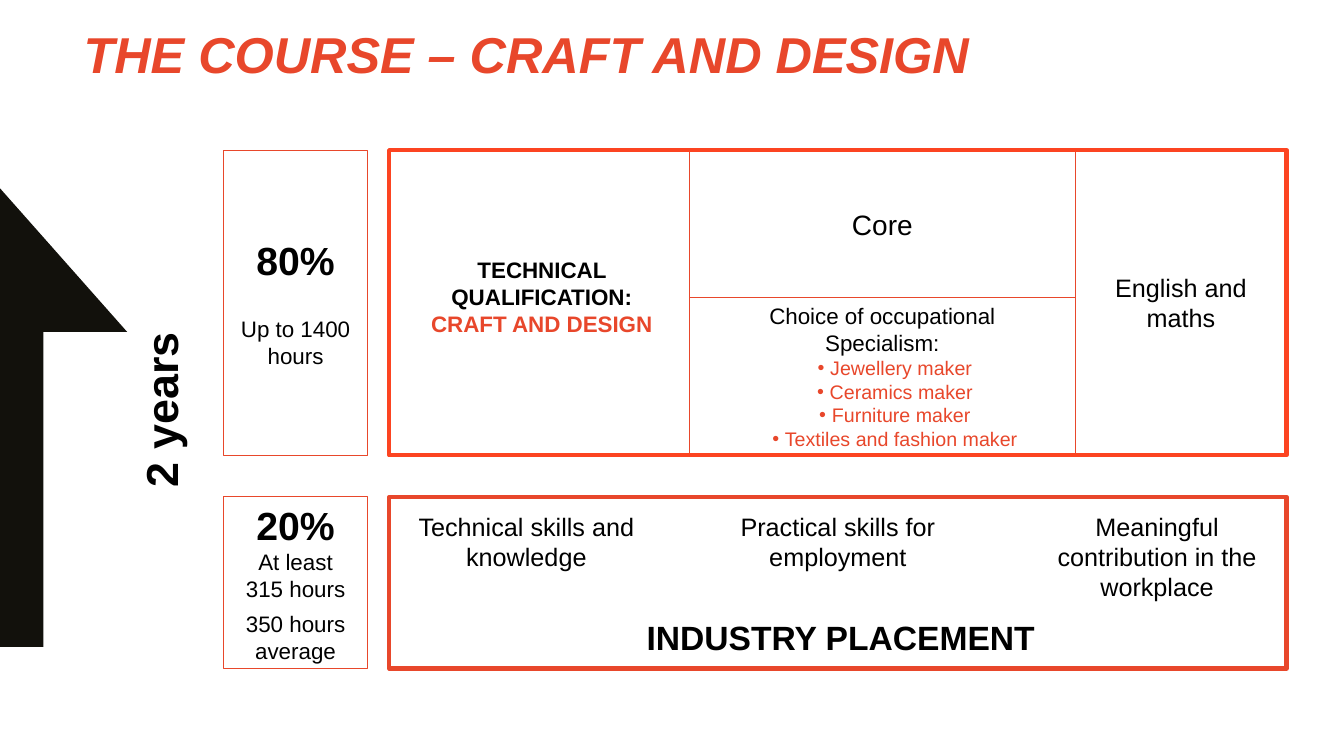
from lxml.etree import SubElement
from pptx import Presentation
from pptx.dml.color import RGBColor
from pptx.enum.shapes import MSO_SHAPE as Kind
from pptx.enum.text import MSO_ANCHOR as Anchor, MSO_AUTO_SIZE as Fit, PP_ALIGN as Align
from pptx.oxml.ns import qn
from pptx.util import Pt

HUES = {"ink": "000000", "red": "E8472B", "frame": "FC4421",
        "arrow": "12110C", "white": "FFFFFF"}
SKILLS = ["Jewellery maker", "Ceramics maker", "Furniture maker",
          "Textiles and fashion maker"]

# Column edges and row bands of the diagram
LEFT, TECH, CORE, MATHS, RIGHT = 160, 278, 492.5, 768, 919
TOP, SPLIT, END = 107.25, 212.5, 325.25
BASE, DEEP = 355, 122.5
TALL, WIDE, SIDE = END - TOP, RIGHT - TECH, 102.25


def hue(name):
    return RGBColor.from_string(HUES[name])


def place(shape, box):
    shape.left, shape.top, shape.width, shape.height = map(Pt, box)


def write(shape, rows, anchor=Anchor.MIDDLE, align=Align.CENTER):
    """Fill a shape with rows of (text, size, bold, colour)."""
    frame = shape.text_frame
    frame.word_wrap = True
    frame.auto_size = Fit.NONE
    frame.vertical_anchor = anchor
    frame.text = "\n".join(row[0] for row in rows)
    for para, (_, size, bold, tint) in zip(frame.paragraphs, rows):
        para.alignment = align
        para.space_before = Pt(0)
        for run in para.runs:
            font = run.font
            font.name, font.size, font.bold = "Arial", Pt(size), bold
            font.color.rgb = hue(tint)
    return frame.paragraphs


def outline(shape, tint, width):
    shape.line.color.rgb = hue(tint)
    shape.line.width = Pt(width)


def panel(slide, box, rows=(), tint="red", width=0.75):
    shape = slide.shapes.add_shape(Kind.RECTANGLE, *map(Pt, box))
    shape.shadow.inherit = False
    shape.fill.background()
    outline(shape, tint, width)
    return write(shape, rows) if rows else shape


def label(slide, box, rows, anchor=Anchor.TOP):
    shape = slide.shapes.add_textbox(*map(Pt, box))
    write(shape, rows, anchor)
    return shape


def bullet(para, on):
    props = para._p.get_or_add_pPr()
    props.set("marL", str(Pt(27 if on else 0)))
    props.set("indent", str(Pt(-9 if on else 0)))
    if on:
        SubElement(props, qn("a:buChar"), char="•")
    else:
        SubElement(props, qn("a:buNone"))


def arrow(slide):
    draft = slide.shapes.build_freeform(Pt(0), Pt(134.5))
    points = [(90.75, 237), (31, 237), (31, 462), (0, 462)]
    draft.add_line_segments([(Pt(x), Pt(y)) for x, y in points])
    shape = draft.convert_to_shape()
    shape.shadow.inherit = False
    shape.fill.solid()
    shape.fill.fore_color.rgb = hue("arrow")
    shape.line.fill.background()


def heading(slide):
    title = slide.shapes.title
    place(title, (52.5, 12.25, 710.5, 52))
    para = write(title, [("THE COURSE – CRAFT AND DESIGN", 36, True, "red")],
                 align=Align.LEFT)[0]
    para.runs[0].font.italic = True


def choices(slide):
    body = slide.placeholders[1]
    place(body, (CORE, SPLIT, MATHS - CORE, END - SPLIT))
    outline(body, "red", 0.75)
    intro = ["Choice of occupational", "Specialism:"]
    rows = [(text, 16, False, "ink") for text in intro]
    rows += [(text, 14, False, "red") for text in SKILLS]
    for spot, para in enumerate(write(body, rows)):
        bullet(para, spot >= len(intro))


def shares(slide):
    """Draw the two boxes with the share of time."""
    paras = panel(slide, (LEFT, TOP, SIDE, TALL), [
        ("80%", 28, True, "ink"), ("Up to 1400 hours", 16, False, "ink")])
    paras[1].space_before = Pt(23)
    paras = panel(slide, (LEFT, BASE, SIDE, DEEP), [
        ("20%", 28, True, "ink"), ("At least", 16, False, "ink"),
        ("315 hours", 16, False, "ink"), ("350 hours average", 16, False, "ink")])
    paras[2].space_after = Pt(6)


def study(slide):
    label(slide, (281, TOP, 212, 209.5), [
        ("TECHNICAL QUALIFICATION:", 16, True, "ink"),
        ("CRAFT AND DESIGN", 16, True, "red")], Anchor.MIDDLE)
    panel(slide, (CORE, TOP, MATHS - CORE, SPLIT - TOP),
          [("Core", 20, False, "ink")])
    panel(slide, (MATHS, TOP, RIGHT - MATHS, TALL),
          [("English and maths", 18, False, "ink")])
    panel(slide, (TECH, TOP, WIDE, TALL), tint="frame", width=3)


def work(slide):
    band = panel(slide, (280, 430.5, WIDE, 49.5))
    band.fill.solid()
    band.fill.fore_color.rgb = hue("white")
    band.line.fill.background()
    write(band, [("INDUSTRY PLACEMENT", 24, True, "ink")])
    panel(slide, (TECH, BASE, WIDE, DEEP), width=3)
    for left, width, text in [
            (TECH, 196, "Technical skills and knowledge"),
            (499, 199, "Practical skills for employment"),
            (734, 185, "Meaningful contribution in the workplace")]:
        label(slide, (left, 361.5, width, 84), [(text, 18, False, "ink")])


def main():
    deck = Presentation()
    deck.slide_width, deck.slide_height = Pt(960), Pt(540)
    slide = deck.slides.add_slide(deck.slide_layouts[1])
    arrow(slide)
    heading(slide)
    shares(slide)
    choices(slide)
    study(slide)
    work(slide)
    years = label(slide, (-70.5, 275.75, 370, 34),
                  [("2 years", 32, True, "ink")], Anchor.MIDDLE)
    years.rotation = 270
    deck.save("out.pptx")


if __name__ == "__main__":
    main()
